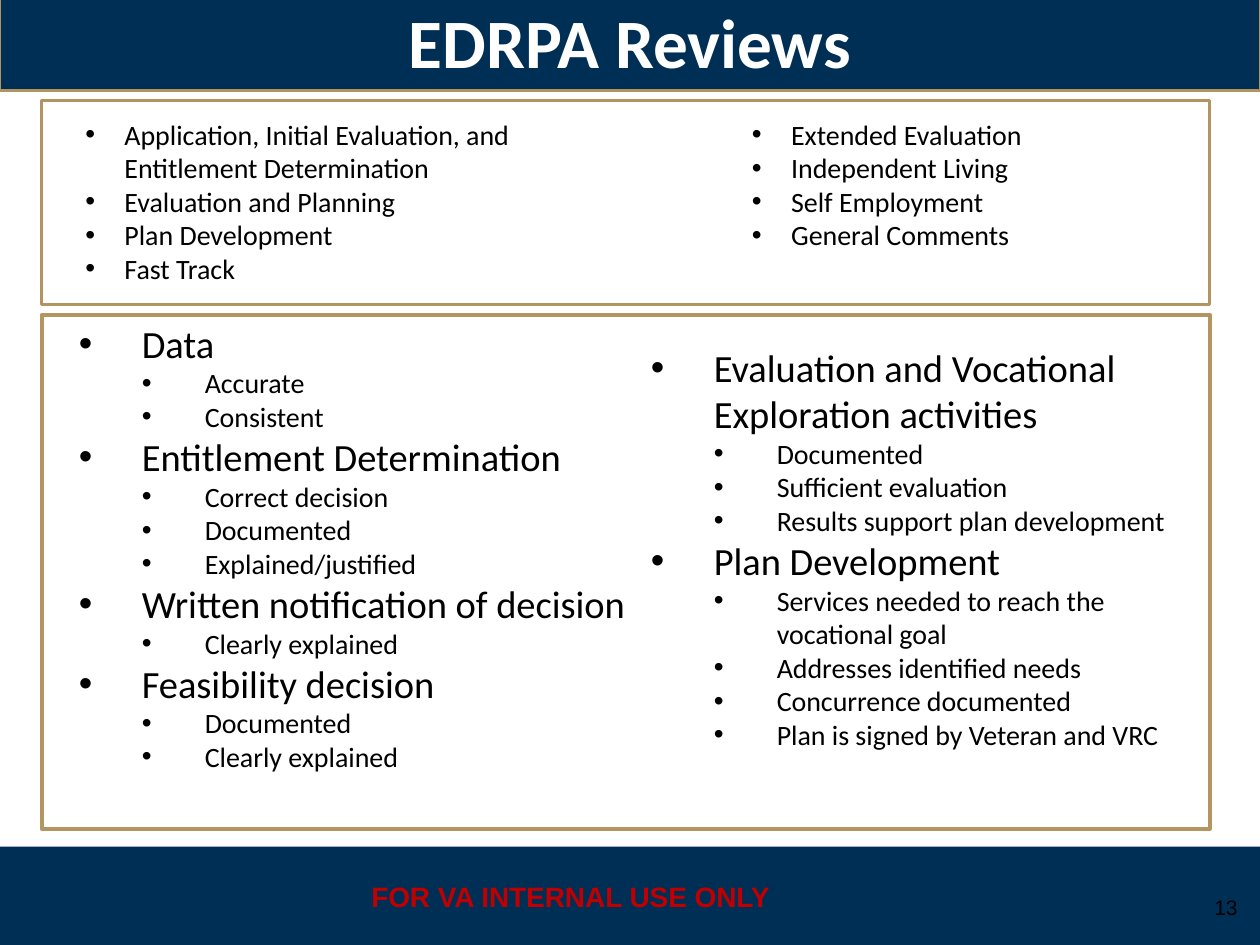
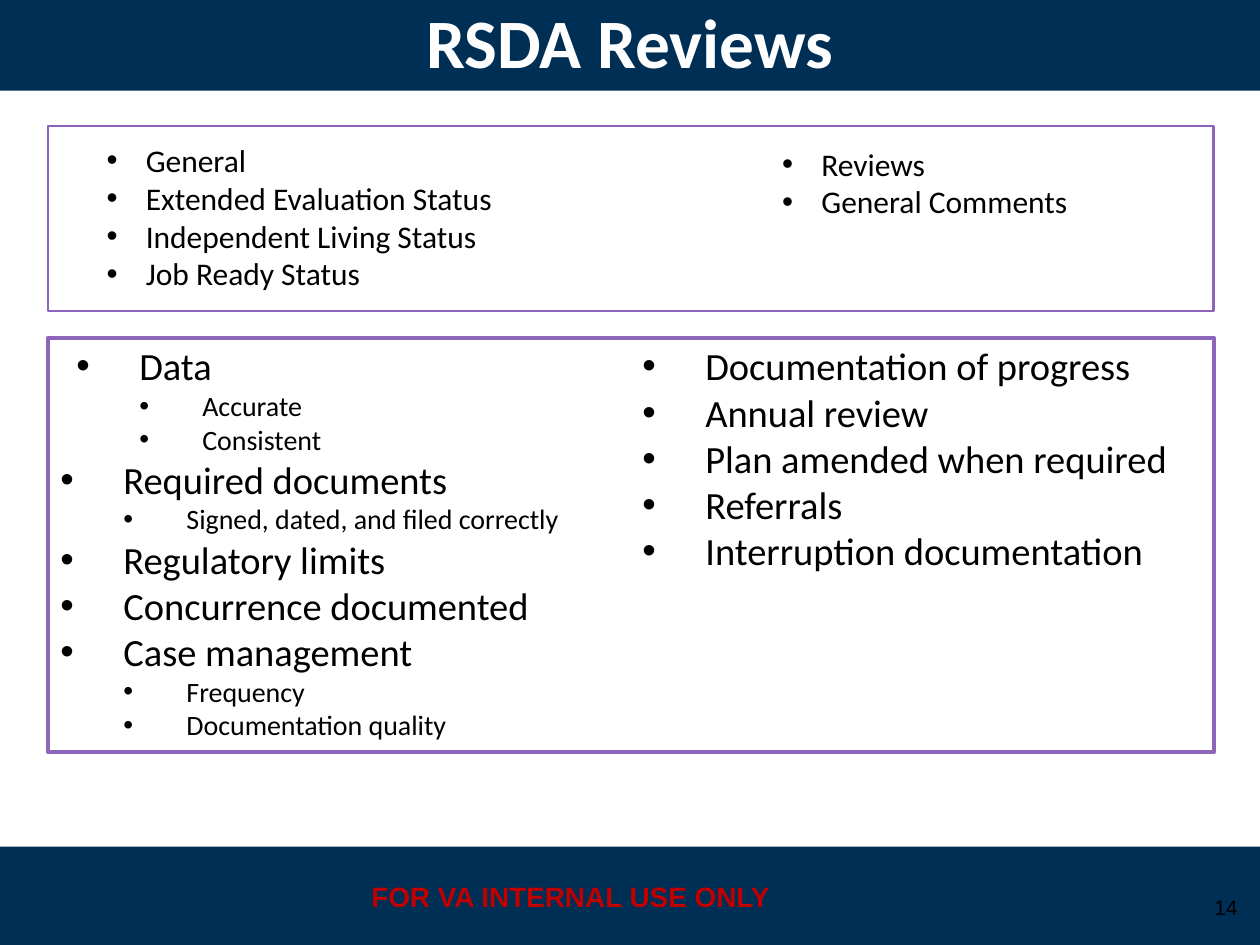
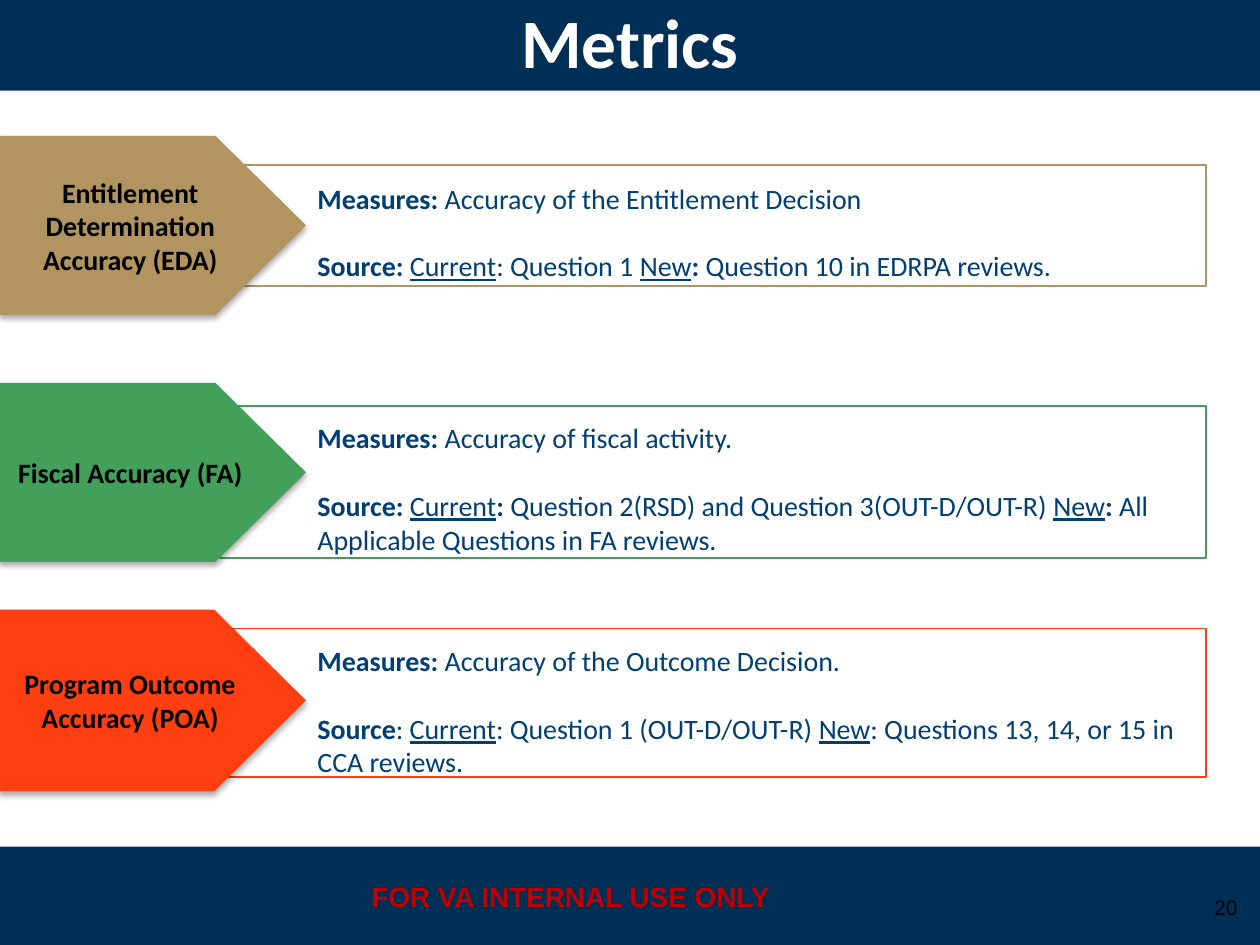
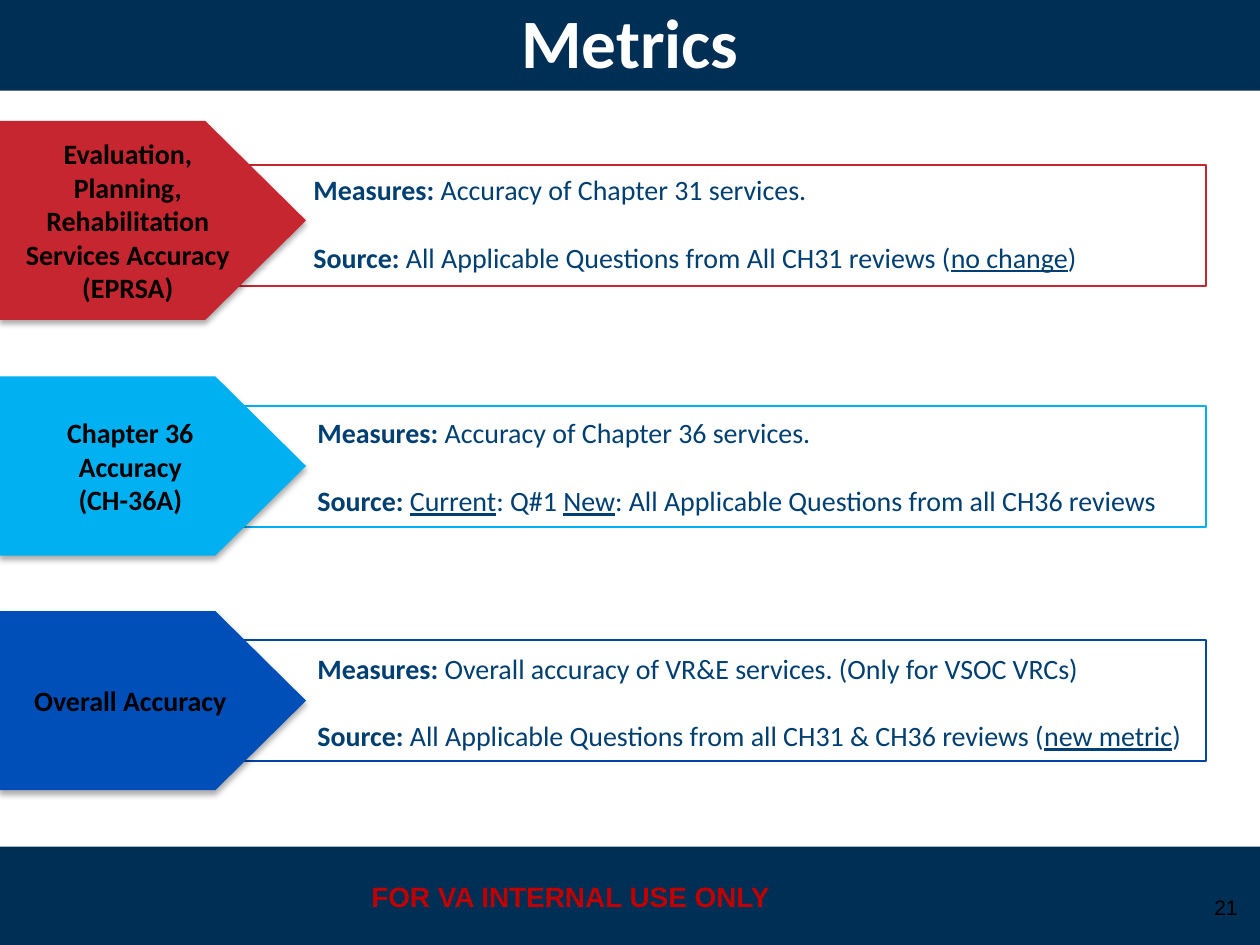
from dataclasses import dataclass

from lxml import etree
from pptx import Presentation
from pptx.dml.color import RGBColor
from pptx.enum.shapes import MSO_SHAPE
from pptx.enum.text import MSO_ANCHOR, MSO_AUTO_SIZE, PP_ALIGN
from pptx.oxml.ns import qn
from pptx.util import Cm, Pt

RECT, PENTAGON = MSO_SHAPE.RECTANGLE, MSO_SHAPE.PENTAGON
TOP, MIDDLE = MSO_ANCHOR.TOP, MSO_ANCHOR.MIDDLE
LEFT, CENTER, RIGHT = PP_ALIGN.LEFT, PP_ALIGN.CENTER, PP_ALIGN.RIGHT
GROW, FIXED = MSO_AUTO_SIZE.SHAPE_TO_FIT_TEXT, MSO_AUTO_SIZE.NONE


@dataclass(frozen=True)
class Theme:
    navy: str = "002F56"
    ink: str = "003F72"
    black: str = "000000"
    white: str = "FFFFFF"
    red: str = "C00000"
    gold: str = "B1945F"
    body_font: str = "Calibri"
    footer_font: str = "Arial"
    title: float = 39.6
    heading: float = 22
    body: float = 16
    number: float = 12
    blank_line: float = 19.5


THEME = Theme()
PLAIN, BOLD, UNDERLINED = {}, {"bold": True}, {"underline": True}

NOTICE = "FOR VA INTERNAL USE ONLY"
PAGE_SIZE = (25.4, 19.05)
TITLE_BAND = (0, -0.2, 25.4, 2.03)
FOOTER_BAND = (0, 17.07, 25.4, 2.03)
NOTICE_PLACE = (6.5, 17.6, 10.01, 0.94)
NUMBER_PLACE = (24.13, 17.78, 1.07, 1.02)
HANGING = 1.27
TOPIC_HANGING = 0.79
METRIC_FRAME_LEFT, METRIC_FRAME_WIDTH = 4.43, 19.89
METRIC_TEXT_WIDTH = 18.16
CHEVRON_WIDTH, CHEVRON_POINT = 6.17, 0.506

REVIEWS = [
    {
        "title": "EDRPA Reviews",
        "number": 13,
        "title_border": THEME.gold,
        "frames": [
            ((0.84, 2.03, 23.55, 4.11), "B1945F", 1.5),
            ((0.84, 6.35, 23.55, 10.36), "B2955F", 2.25),
        ],
        "topic_size": 16,
        "topics": [
            ((1.47, 2.24, 9.22, 3.68), [
                "Application, Initial Evaluation, and Entitlement Determination",
                "Evaluation and Planning",
                "Plan Development",
                "Fast Track",
            ]),
            ((14.91, 2.24, 9.22, 3.0), [
                "Extended Evaluation",
                "Independent Living",
                "Self Employment",
                "General Comments",
            ]),
        ],
        "criteria": [
            ((1.02, 6.32, 12.27, 9.5), [
                (1.59, "Data", ["Accurate", "Consistent"]),
                (1.59, "Entitlement Determination",
                 ["Correct decision", "Documented", "Explained/justified"]),
                (1.59, "Written notification of decision", ["Clearly explained"]),
                (1.59, "Feasibility decision", ["Documented", "Clearly explained"]),
            ]),
            ((12.55, 6.81, 11.53, 8.56), [
                (1.59, "Evaluation and Vocational Exploration activities",
                 ["Documented", "Sufficient evaluation",
                  "Results support plan development"]),
                (1.59, "Plan Development",
                 ["Services needed to reach the vocational goal",
                  "Addresses identified needs",
                  "Concurrence documented",
                  "Plan is signed by Veteran and VRC"]),
            ]),
        ],
    },
    {
        "title": "RSDA Reviews",
        "number": 14,
        "title_border": None,
        "frames": [
            ((0.97, 2.54, 23.5, 3.73), "8C64BC", 1.5),
            ((0.97, 6.81, 23.5, 8.36), "8D66B9", 2.25),
        ],
        "topic_size": 18,
        "topics": [
            ((1.9, 2.72, 9.27, 3.43), [
                "General",
                "Extended Evaluation Status",
                "Independent Living Status",
                "Job Ready Status",
            ]),
            ((15.52, 2.79, 9.27, 1.8), ["Reviews", "General Comments"]),
        ],
        "criteria": [
            ((0.97, 6.78, 11.73, 8.38), [
                (1.59, "Data", ["Accurate", "Consistent"]),
                (1.27, "Required documents", ["Signed, dated, and filed correctly"]),
                (1.27, "Regulatory limits", []),
                (1.27, "Concurrence documented", []),
                (1.27, "Case management", ["Frequency", "Documentation quality"]),
            ]),
            ((12.7, 6.78, 11.73, 6.15), [
                (1.27, "Documentation of progress", []),
                (1.27, "Annual review", []),
                (1.27, "Plan amended when required", []),
                (1.27, "Referrals", []),
                (1.27, "Interruption documentation", []),
            ]),
        ],
    },
]

METRICS = [
    {
        "title": "Metrics",
        "number": 20,
        "rows": [
            {
                "label": ["Entitlement Determination Accuracy (EDA)"],
                "colors": ("B1945F", "B1945F"),
                "chevron": (2.74, 3.61), "frame": (3.33, 2.44), "text": (6.15, 3.53),
                "measures": "Accuracy of the Entitlement Decision",
                "source": [("Source: ", BOLD), ("Current", UNDERLINED),
                           (": Question 1 ", PLAIN), ("New", UNDERLINED), (": ", BOLD),
                           ("Question 10 in EDRPA reviews.", PLAIN)],
            },
            {
                "label": ["Fiscal Accuracy (FA)"],
                "colors": ("42A05B", "42A05B"),
                "chevron": (7.72, 3.61), "frame": (8.18, 3.07), "text": (6.15, 8.36),
                "measures": "Accuracy of fiscal activity.",
                "source": [("Source: ", BOLD), ("Current", UNDERLINED), (": ", BOLD),
                           ("Question 2(RSD) and Question 3(OUT-D/OUT-R) ", PLAIN),
                           ("New", UNDERLINED), (": ", BOLD),
                           ("All Applicable Questions in FA reviews.", PLAIN)],
            },
            {
                "label": ["Program Outcome Accuracy (POA)"],
                "colors": ("FF3E11", "FF3E11"),
                "chevron": (12.29, 3.66), "frame": (12.67, 3.0), "text": (6.15, 12.85),
                "measures": "Accuracy of the Outcome Decision.",
                "source": [("Source", BOLD), (": ", PLAIN), ("Current", UNDERLINED),
                           (": Question 1 (OUT-D/OUT-R) ", PLAIN), ("New", UNDERLINED),
                           (": Questions 13, 14, or 15 in CCA reviews.", PLAIN)],
            },
        ],
    },
    {
        "title": "Metrics",
        "number": 21,
        "rows": [
            {
                "label": ["Evaluation, Planning, Rehabilitation Services Accuracy (EPRSA)"],
                "colors": ("C62630", "C62630"),
                "chevron": (2.44, 4.01), "frame": (3.33, 2.44), "text": (6.07, 3.35),
                "measures": "Accuracy of Chapter 31 services.",
                "source": [("Source: ", BOLD),
                           ("All Applicable Questions from All CH31 reviews (", PLAIN),
                           ("no change", UNDERLINED), (")", PLAIN)],
            },
            {
                "label": ["Chapter 36 Accuracy", "(CH-36A)"],
                "colors": ("00B0F0", "00B0F0"),
                "chevron": (7.59, 3.61), "frame": (8.18, 2.44), "text": (6.15, 8.26),
                "measures": "Accuracy of Chapter 36 services.",
                "source": [("Source: ", BOLD), ("Current", UNDERLINED),
                           (": Q#1 ", PLAIN), ("New", UNDERLINED),
                           (": All Applicable Questions from all CH36 reviews", PLAIN)],
            },
            {
                "label": ["Overall Accuracy"],
                "colors": ("004FB8", "0047A4"),
                "chevron": (12.32, 3.61), "frame": (12.9, 2.44), "text": (6.15, 13.0),
                "measures": "Overall accuracy of VR&E services. (Only for VSOC VRCs)",
                "source": [("Source: ", BOLD),
                           ("All Applicable Questions from all CH31 & CH36 reviews (", PLAIN),
                           ("new metric", UNDERLINED), (")", PLAIN)],
            },
        ],
    },
]


def apply(target, formats):
    for name, value in formats.items():
        if isinstance(value, dict):
            apply(getattr(target, name), value)
        else:
            setattr(target, name, value)


def font_format(size, color=THEME.black, name=THEME.body_font, **extra):
    return {"name": name, "size": Pt(size),
            "color": {"rgb": RGBColor.from_string(color)}, **extra}


def paint(part, color):
    if color:
        part.solid()
        part.fore_color.rgb = RGBColor.from_string(color)
    else:
        part.background()


def add_panel(slide, place, fill=None, border=None, weight=1, kind=RECT):
    panel = slide.shapes.add_shape(kind, *map(Cm, place))
    panel.shadow.inherit = False
    paint(panel.fill, fill)
    paint(panel.line.fill, border)
    if border:
        panel.line.width = Pt(weight)
    return panel


def write(holder, paragraphs, font, align=LEFT, anchor=TOP, fit=FIXED):
    frame = holder.text_frame
    apply(frame, {"word_wrap": True, "vertical_anchor": anchor, "auto_size": fit})
    for index, runs in enumerate(paragraphs):
        paragraph = frame.add_paragraph() if index else frame.paragraphs[0]
        paragraph.alignment = align
        for words, style in runs:
            run = paragraph.add_run()
            run.text = words
            apply(run.font, {**font, **style})
    return frame.paragraphs


def add_text(slide, place, paragraphs, font, **layout):
    return write(slide.shapes.add_textbox(*map(Cm, place)), paragraphs, font, **layout)


def add_bullets(slide, place, entries):
    paragraphs = [[(words, {"size": Pt(size)})] for words, size, _, _ in entries]
    written = add_text(slide, place, paragraphs, font_format(THEME.body), fit=GROW)
    for paragraph, (_, _, margin, hanging) in zip(written, entries):
        properties = paragraph._p.get_or_add_pPr()
        properties.set("marL", str(Cm(margin)))
        properties.set("indent", str(-Cm(hanging)))
        etree.SubElement(properties, qn("a:buFont"), typeface="Arial")
        etree.SubElement(properties, qn("a:buChar"), char="•")


def cast_shadow(shape):
    effects = shape._element.spPr.find(qn("a:effectLst"))
    shadow = etree.SubElement(effects, qn("a:outerShdw"), blurRad=str(Pt(3.5)),
                              dist=str(Pt(2.2)), dir="5400000", rotWithShape="0")
    color = etree.SubElement(shadow, qn("a:srgbClr"), val=THEME.black)
    etree.SubElement(color, qn("a:alpha"), val="32000")


def start_slide(deck, title, number, border=None):
    slide = deck.slides.add_slide(deck.slide_layouts[6])
    add_panel(slide, FOOTER_BAND, THEME.navy)
    add_text(slide, NOTICE_PLACE, [[(NOTICE, BOLD)]],
             font_format(THEME.body, THEME.red, THEME.footer_font),
             align=CENTER, fit=GROW)
    band = add_panel(slide, TITLE_BAND, THEME.navy, border, 1.5)
    write(band, [[(title, BOLD)]], font_format(THEME.title, THEME.white),
          align=CENTER, anchor=MIDDLE)
    add_text(slide, NUMBER_PLACE, [[(str(number), PLAIN)]],
             font_format(THEME.number, name=THEME.footer_font),
             align=RIGHT, anchor=MIDDLE)
    return slide


def criteria_entries(groups):
    entries = []
    for margin, heading, details in groups:
        entries.append((heading, THEME.heading, margin, HANGING))
        entries += [(detail, THEME.body, margin + HANGING, HANGING) for detail in details]
    return entries


def build_review(deck, review):
    slide = start_slide(deck, review["title"], review["number"], review["title_border"])
    for place, border, weight in review["frames"]:
        add_panel(slide, place, border=border, weight=weight)
    for place, groups in review["criteria"]:
        add_bullets(slide, place, criteria_entries(groups))
    for place, topics in review["topics"]:
        add_bullets(slide, place, [(topic, review["topic_size"], TOPIC_HANGING, TOPIC_HANGING)
                                   for topic in topics])


def build_metrics(deck, metrics):
    slide = start_slide(deck, metrics["title"], metrics["number"])
    for row in metrics["rows"]:
        fill, border = row["colors"]
        frame_top, frame_height = row["frame"]
        add_panel(slide, (METRIC_FRAME_LEFT, frame_top, METRIC_FRAME_WIDTH, frame_height),
                  border=border)
        measures = [("Measures: ", BOLD), (row["measures"], PLAIN)]
        _, source = add_text(slide, (*row["text"], METRIC_TEXT_WIDTH, frame_height),
                             [measures, row["source"]],
                             font_format(THEME.body, THEME.ink), fit=GROW)
        source.space_before = Pt(THEME.blank_line)
        chevron_top, chevron_height = row["chevron"]
        chevron = add_panel(slide, (0, chevron_top, CHEVRON_WIDTH, chevron_height),
                            fill, kind=PENTAGON)
        chevron.adjustments[0] = CHEVRON_POINT
        cast_shadow(chevron)
        write(chevron, [[(line, BOLD)] for line in row["label"]],
              font_format(THEME.body), align=CENTER, anchor=MIDDLE)


def main():
    deck = Presentation()
    deck.slide_width, deck.slide_height = map(Cm, PAGE_SIZE)
    for review in REVIEWS:
        build_review(deck, review)
    for metrics in METRICS:
        build_metrics(deck, metrics)
    deck.save("out.pptx")


if __name__ == "__main__":
    main()
